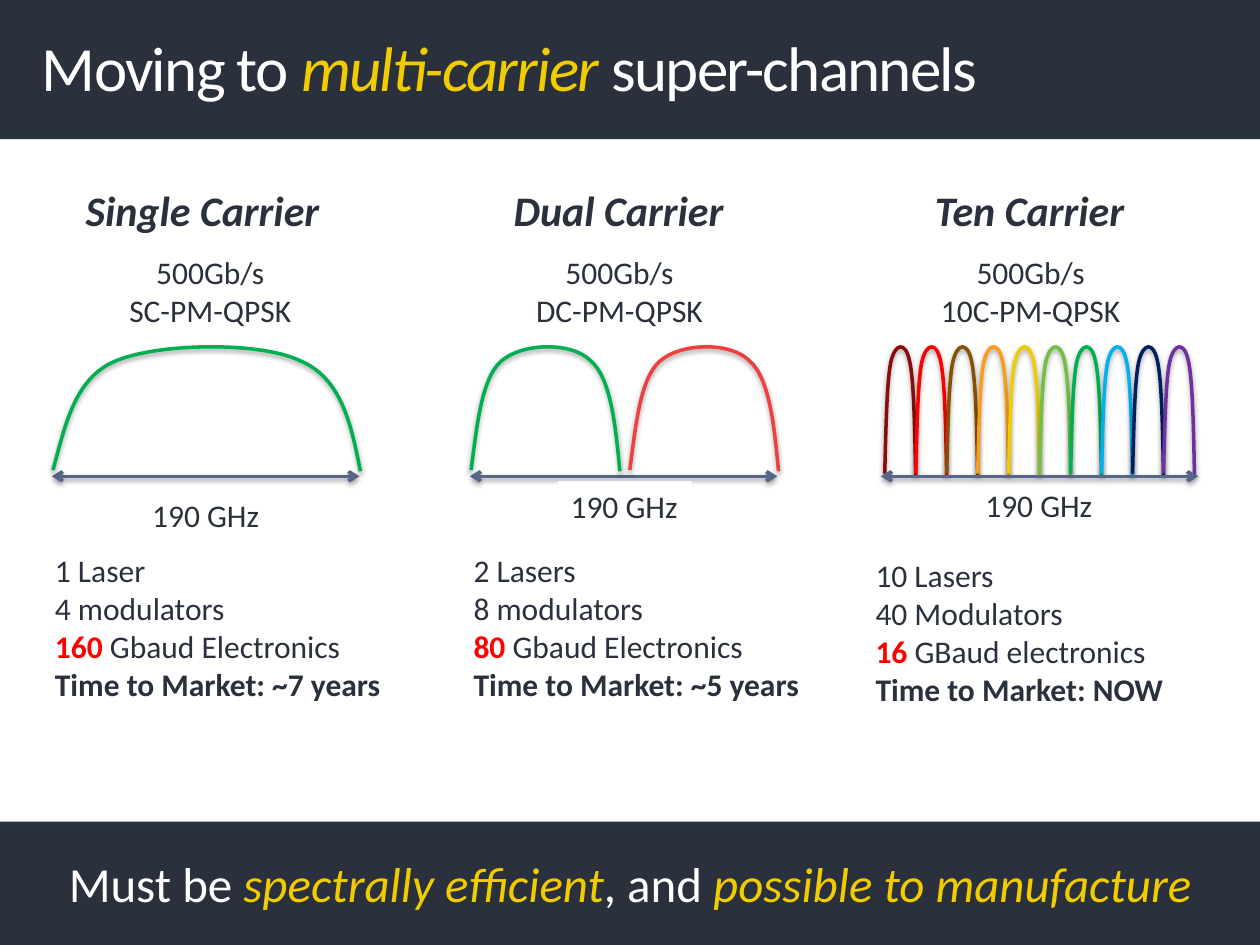
"""Build a slide comparing single, dual and ten carrier super-channels."""
import pptx
import pptx.dml.color
import pptx.enum.shapes
import pptx.enum.text
import pptx.oxml
import pptx.oxml.ns
import pptx.util

Pt = pptx.util.Pt
Align = pptx.enum.text.PP_ALIGN
Anchor = pptx.enum.text.MSO_ANCHOR
NAMESPACE = pptx.oxml.ns.nsdecls("a")

DARK, WHITE, YELLOW, RED = "2A313D", "FFFFFF", "F0CC01", "FF0000"
ARROW, GREEN = "556686", "00B050"
RAINBOW = ["8B0C0C", "FF0000", "865104", "F89E1C", "F0CC01",
           "72BF44", GREEN, "00B0F0", "002060", "7030A0"]

TITLE = [("Moving to ", WHITE, ""), ("multi-carrier", YELLOW, "i"),
         (" super-channels", WHITE, "")]
FOOTER = [("Must be ", WHITE, ""), ("spectrally efficient", YELLOW, "i"),
          (", and ", WHITE, ""), ("possible to manufacture", YELLOW, "i")]

COLUMNS = [
    dict(heading="Single Carrier", heading_box=(41.8, 149),
         modulation="SC-PM-QPSK", modulation_box=(66.2, 108),
         width_box=(79.9, 280), opacity=100, arrow=(29.6, 205.4), arrow_on_top=False,
         lobes=[GREEN], lobe_left=30.3, lobe_width=175.7, lobe_pitch=0, lobe_height=71.3,
         facts=["1 Laser", "4 modulators", ("160 ", "Gbaud Electronics"),
                "Time to Market: ~7 years"], facts_box=(24.3, 311.5, 202.3)),
    dict(heading="Dual Carrier", heading_box=(286.4, 134.6),
         modulation="DC-PM-QPSK", modulation_box=(298.6, 110.9),
         width_box=(319, 275), opacity=100, arrow=(268.5, 444.2), arrow_on_top=False,
         lobes=[GREEN, "EF3F3F"], lobe_left=269.2, lobe_width=85, lobe_pitch=90.7, lobe_height=71.3,
         facts=["2 Lasers", "8 modulators", ("80 ", "Gbaud Electronics"),
                "Time to Market: ~5 years"], facts_box=(263.5, 311.5, 202.3)),
    dict(heading="Ten Carrier", heading_box=(527.2, 123.8),
         modulation="10C-PM-QPSK", modulation_box=(529.9, 118.1),
         width_box=(556, 274.3), opacity=46, arrow=(503.4, 684.7), arrow_on_top=True,
         lobes=RAINBOW, lobe_left=505.6, lobe_width=17.7, lobe_pitch=17.7, lobe_height=73.4,
         facts=["10 Lasers", "40 Modulators", ("16 ", "GBaud electronics"),
                "Time to Market: NOW"], facts_box=(493.2, 314.4, 180.7)),
]

LOBE_TOP, ARROW_Y = 198, 272.2
LOBE_START = (0, 0.99)
LOBE_CURVES = [
    [(0.04, 0.63), (0.07, 0.26), (0.2, 0.12)],
    [(0.34, -0.03), (0.67, -0.04), (0.8, 0.11)],
    [(0.94, 0.25), (0.97, 0.63), (1, 1)],
]


def color(value):
    return pptx.dml.color.RGBColor.from_string(value)


def add_shadow(shape):
    shape._element.spPr.append(pptx.oxml.parse_xml(
        f'<a:effectLst {NAMESPACE}>'
        '<a:outerShdw blurRad="39370" dist="20320" dir="5400000" rotWithShape="0">'
        '<a:srgbClr val="000000"><a:alpha val="38000"/></a:srgbClr>'
        '</a:outerShdw></a:effectLst>'))


def write(shape, paragraphs, size, align=Align.LEFT, anchor=Anchor.TOP, wrap=False):
    """Fill the shape with paragraphs of (text, colour, style) runs."""
    frame = shape.text_frame
    frame.word_wrap = wrap
    frame.vertical_anchor = anchor
    frame.auto_size = (pptx.enum.text.MSO_AUTO_SIZE.NONE if wrap
                       else pptx.enum.text.MSO_AUTO_SIZE.SHAPE_TO_FIT_TEXT)
    for index, runs in enumerate(paragraphs):
        paragraph = frame.add_paragraph() if index else frame.paragraphs[0]
        paragraph.alignment = align
        for text, run_color, style in runs:
            run = paragraph.add_run()
            run.text = text
            run.font.name = "Calibri"
            run.font.size = Pt(size)
            run.font.color.rgb = color(run_color)
            run.font.bold = "b" in style
            run.font.italic = "i" in style


def add_text(slide, box, *arguments, **options):
    shape = slide.shapes.add_textbox(*map(Pt, box))
    write(shape, *arguments, **options)
    return shape


def add_rectangle(slide, box, fill, opacity=100):
    shape = slide.shapes.add_shape(
        pptx.enum.shapes.MSO_SHAPE.RECTANGLE, *map(Pt, box))
    shape.shadow.inherit = False
    shape.fill.solid()
    shape.fill.fore_color.rgb = color(fill)
    shape.line.fill.background()
    if opacity < 100:
        shape._element.spPr.find(".//" + pptx.oxml.ns.qn("a:srgbClr")).append(
            pptx.oxml.parse_xml(f'<a:alpha {NAMESPACE} val="{opacity * 1000}"/>'))
    return shape


def add_arrow(slide, left, right):
    arrow = slide.shapes.add_connector(
        pptx.enum.shapes.MSO_CONNECTOR.STRAIGHT, Pt(left), Pt(ARROW_Y), Pt(right), Pt(ARROW_Y))
    arrow.line.width = Pt(2)
    arrow.line.color.rgb = color(ARROW)
    for end in ("headEnd", "tailEnd"):
        arrow.line._get_or_add_ln().append(pptx.oxml.parse_xml(
            f'<a:{end} {NAMESPACE} type="arrow"/>'))
    add_shadow(arrow)


def add_lobe(slide, left, width, height, line_color):
    """Draw one carrier as an open outline of three cubic curves."""
    builder = slide.shapes.build_freeform(Pt(left), Pt(LOBE_TOP), scale=1.0)
    builder.add_line_segments([(Pt(left + width), Pt(LOBE_TOP + height))], close=False)
    lobe = builder.convert_to_shape()
    outline = lobe._element.spPr.find(".//" + pptx.oxml.ns.qn("a:path"))
    for segment in list(outline):
        outline.remove(segment)
    for tag, points in [("moveTo", [LOBE_START])] + [("cubicBezTo", c) for c in LOBE_CURVES]:
        marks = "".join(f'<a:pt x="{int(Pt(x * width))}" y="{int(Pt(y * height))}"/>'
                        for x, y in points)
        outline.append(pptx.oxml.parse_xml(f'<a:{tag} {NAMESPACE}>{marks}</a:{tag}>'))
    lobe.fill.background()
    lobe.line.width = Pt(2)
    lobe.line.color.rgb = color(line_color)
    add_shadow(lobe)


def add_column(slide, column):
    if not column["arrow_on_top"]:
        add_arrow(slide, *column["arrow"])
    for index, line_color in enumerate(column["lobes"]):
        add_lobe(slide, column["lobe_left"] + index * column["lobe_pitch"],
                 column["lobe_width"], column["lobe_height"], line_color)
    label = add_rectangle(slide, (*column["width_box"], 76.3, 29), WHITE, column["opacity"])
    write(label, [[("190 GHz", DARK, "")]], 18)
    if column["arrow_on_top"]:
        add_arrow(slide, *column["arrow"])
    left, width = column["heading_box"]
    add_text(slide, (left, 102.2, width, 36), [[(column["heading"], DARK, "bi")]], 24)
    left, width = column["modulation_box"]
    add_text(slide, (left, 141.1, width, 51),
             [[("500Gb/s", DARK, "")], [(column["modulation"], DARK, "")]], 18, Align.CENTER)
    lasers, modulators, (rate, electronics), market = column["facts"]
    add_text(slide, (*column["facts_box"], 94.3),
             [[(lasers, DARK, "")], [(modulators, DARK, "")],
              [(rate, RED, "b"), (electronics, DARK, "")], [(market, DARK, "b")]], 18)


def main():
    presentation = pptx.Presentation()
    presentation.slide_width, presentation.slide_height = Pt(720), Pt(540)
    slide = presentation.slides.add_slide(presentation.slide_layouts[6])
    add_rectangle(slide, (0, 0, 720, 79.6), DARK)
    title = add_text(slide, (24, 5, 671.8, 73.4), [TITLE], 36, anchor=Anchor.MIDDLE, wrap=True)
    title.text_frame.margin_left = 0
    title.text_frame.paragraphs[0].line_spacing = Pt(36)
    for run in title.text_frame.paragraphs[0].runs:
        run.font._element.set("spc", "-100")
    footer = add_rectangle(slide, (0, 469.6, 720, 70.4), DARK)
    write(footer, [FOOTER], 28, Align.CENTER, Anchor.MIDDLE, wrap=True)
    for column in COLUMNS:
        add_column(slide, column)
    presentation.save("out.pptx")


if __name__ == "__main__":
    main()
